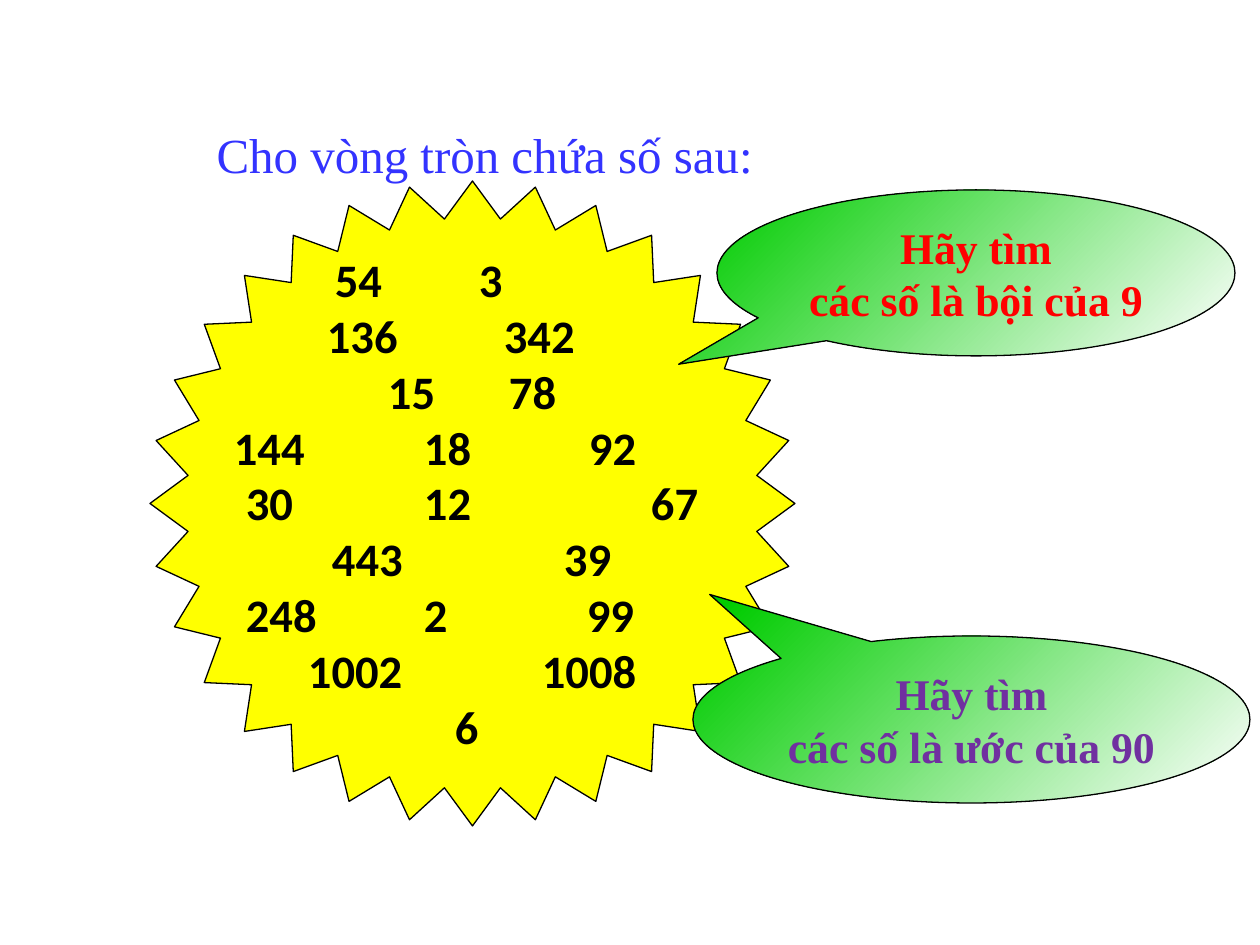
"""Build a slide with a star of numbers and two callouts asking for multiples and divisors."""
from dataclasses import dataclass

from lxml import etree
from pptx import Presentation
from pptx import util as u
from pptx.dml.color import RGBColor
from pptx.enum import shapes, text
from pptx.oxml.ns import qn

EMU_PER_PX = 914400 / 126


@dataclass(frozen=True)
class Theme:
    serif: str = "Times New Roman"
    sans: str = "Calibri"
    black: str = "000000"
    title: str = "3333FF"
    star: str = "FFFF00"
    callout_start: str = "00CC00"
    callout_end: str = "FFFFFF"
    multiples: str = "FF0000"
    divisors: str = "7030A0"
    title_pt: float = 28
    number_pt: float = 26.6
    callout_pt: float = 25
    outline_pt: float = 0.75


@dataclass(frozen=True)
class Box:
    left: int
    top: int
    width: int
    height: int

    def emu(self) -> tuple:
        return tuple(px(side) for side in (self.left, self.top, self.width, self.height))


@dataclass(frozen=True)
class Callout:
    box: Box
    pointer: tuple
    color: str
    lines: tuple


@dataclass(frozen=True)
class NumberRow:
    numbers: tuple
    stops: tuple


THEME = Theme()
TITLE_BOX = Box(204, 118, 669, 72)
STAR_BOX = Box(150, 181, 645, 645)
NUMBERS_BOX = Box(200, 251, 540, 513)
ROWS = (
    NumberRow((54, 3), (135, 279)),
    NumberRow((136, 342), (127, 304)),
    NumberRow((15, 78), (188, 309)),
    NumberRow((144, 18, 92), (34, 224, 389)),
    NumberRow((30, 12, 67), (46, 224, 451)),
    NumberRow((443, 39), (132, 364)),
    NumberRow((248, 2, 99), (46, 224, 387)),
    NumberRow((1002, 1008), (108, 342)),
    NumberRow((6,), (255,)),
)
CALLOUTS = (
    Callout(Box(717, 190, 518, 166), (-0.574, 0.55), THEME.multiples,
            ("Hãy tìm", "các số là bội của 9")),
    Callout(Box(693, 636, 557, 167), (-0.47, -0.749), THEME.divisors,
            ("Hãy tìm", "các số là ước của 90")),
)


def px(length: int) -> u.Emu:
    return u.Emu(round(length * EMU_PER_PX))


def rgb(color: str) -> RGBColor:
    return RGBColor.from_string(color)


def style(paragraph, face: str, size: float, color: str, bold: bool, align) -> None:
    paragraph.alignment = align
    font = paragraph.font
    font.name, font.size, font.bold = face, u.Pt(size), bold
    font.color.rgb = rgb(color)


def add_outlined(slide, preset, box: Box, adjustments: tuple):
    outlined = slide.shapes.add_shape(preset, *box.emu())
    outlined.shadow.inherit = False
    outlined.line.color.rgb = rgb(THEME.black)
    outlined.line.width = u.Pt(THEME.outline_pt)
    for index, value in enumerate(adjustments):
        outlined.adjustments[index] = value
    return outlined


def write_title(slide) -> None:
    title = slide.shapes.title
    title.left, title.top, title.width, title.height = TITLE_BOX.emu()
    frame = title.text_frame
    frame.text = "Cho vòng tròn chứa số sau:"
    frame.auto_size = text.MSO_AUTO_SIZE.NONE
    frame.vertical_anchor = text.MSO_ANCHOR.BOTTOM
    style(frame.paragraphs[0], THEME.serif, THEME.title_pt, THEME.title,
          False, text.PP_ALIGN.LEFT)


def add_star(slide) -> None:
    star = add_outlined(slide, shapes.MSO_SHAPE.STAR_32_POINT, STAR_BOX, (0.443,))
    star.fill.solid()
    star.fill.fore_color.rgb = rgb(THEME.star)


def set_tab_stops(paragraph, stops: tuple) -> None:
    tabs = etree.Element(qn("a:tabLst"))
    for stop in stops:
        etree.SubElement(tabs, qn("a:tab"), pos=str(px(stop)), algn="l")
    paragraph._p.get_or_add_pPr().insert(0, tabs)


def add_numbers(slide) -> None:
    frame = slide.shapes.add_textbox(*NUMBERS_BOX.emu()).text_frame
    frame.word_wrap = True
    frame.margin_left = frame.margin_right = frame.margin_top = frame.margin_bottom = 0
    frame.text = "\n".join("".join(f"\t{number}" for number in row.numbers) for row in ROWS)
    for paragraph, row in zip(frame.paragraphs, ROWS):
        style(paragraph, THEME.sans, THEME.number_pt, THEME.black, True, text.PP_ALIGN.LEFT)
        set_tab_stops(paragraph, row.stops)


def add_callout(slide, callout: Callout) -> None:
    bubble = add_outlined(slide, shapes.MSO_SHAPE.OVAL_CALLOUT, callout.box, callout.pointer)
    bubble.fill.gradient()
    bubble.fill.gradient_angle = 315
    for stop, color in zip(bubble.fill.gradient_stops,
                           (THEME.callout_start, THEME.callout_end)):
        stop.color.rgb = rgb(color)
    frame = bubble.text_frame
    frame.word_wrap = True
    frame.vertical_anchor = text.MSO_ANCHOR.MIDDLE
    frame.text = "\n".join(callout.lines)
    for paragraph in frame.paragraphs:
        style(paragraph, THEME.serif, THEME.callout_pt, callout.color,
              True, text.PP_ALIGN.CENTER)


def main() -> None:
    deck = Presentation()
    deck.slide_width, deck.slide_height = px(1260), px(945)
    slide = deck.slides.add_slide(deck.slide_layouts.get_by_name("Title Only"))
    write_title(slide)
    add_star(slide)
    add_numbers(slide)
    for callout in CALLOUTS:
        add_callout(slide, callout)
    deck.save("out.pptx")


if __name__ == "__main__":
    main()
